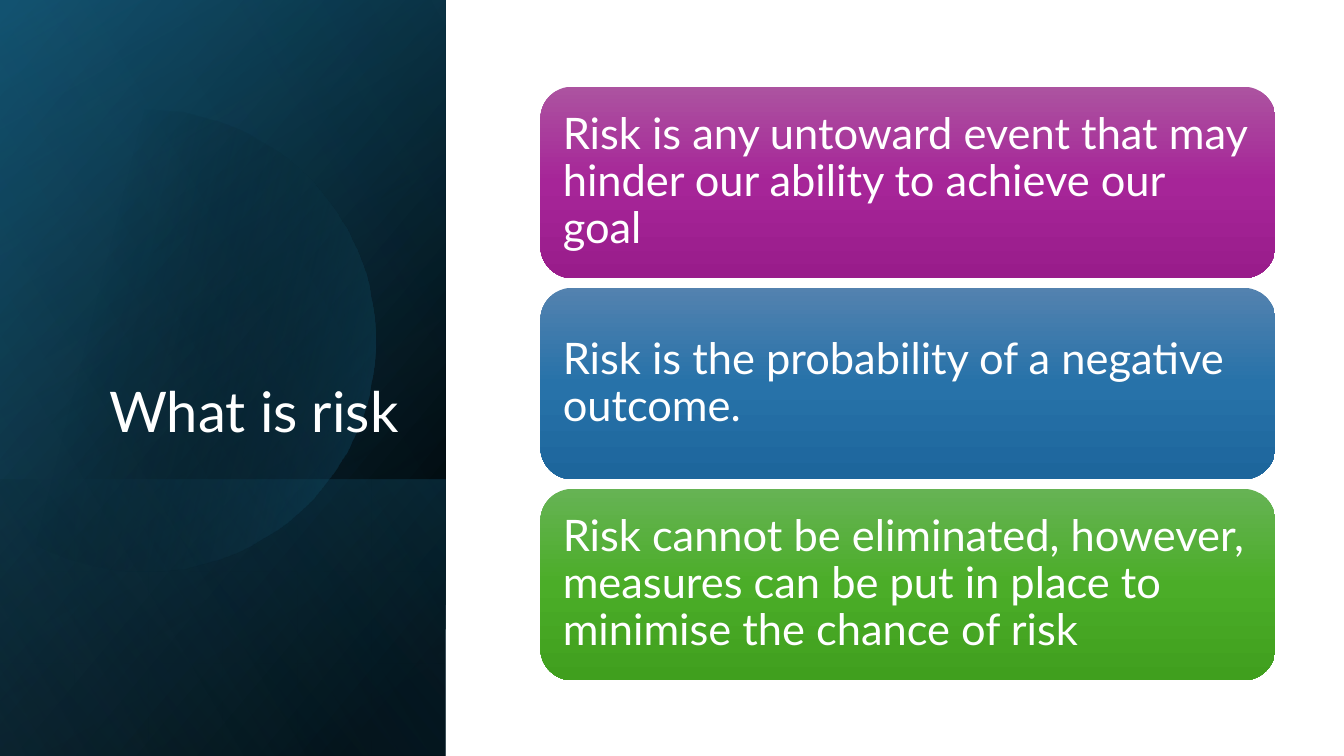
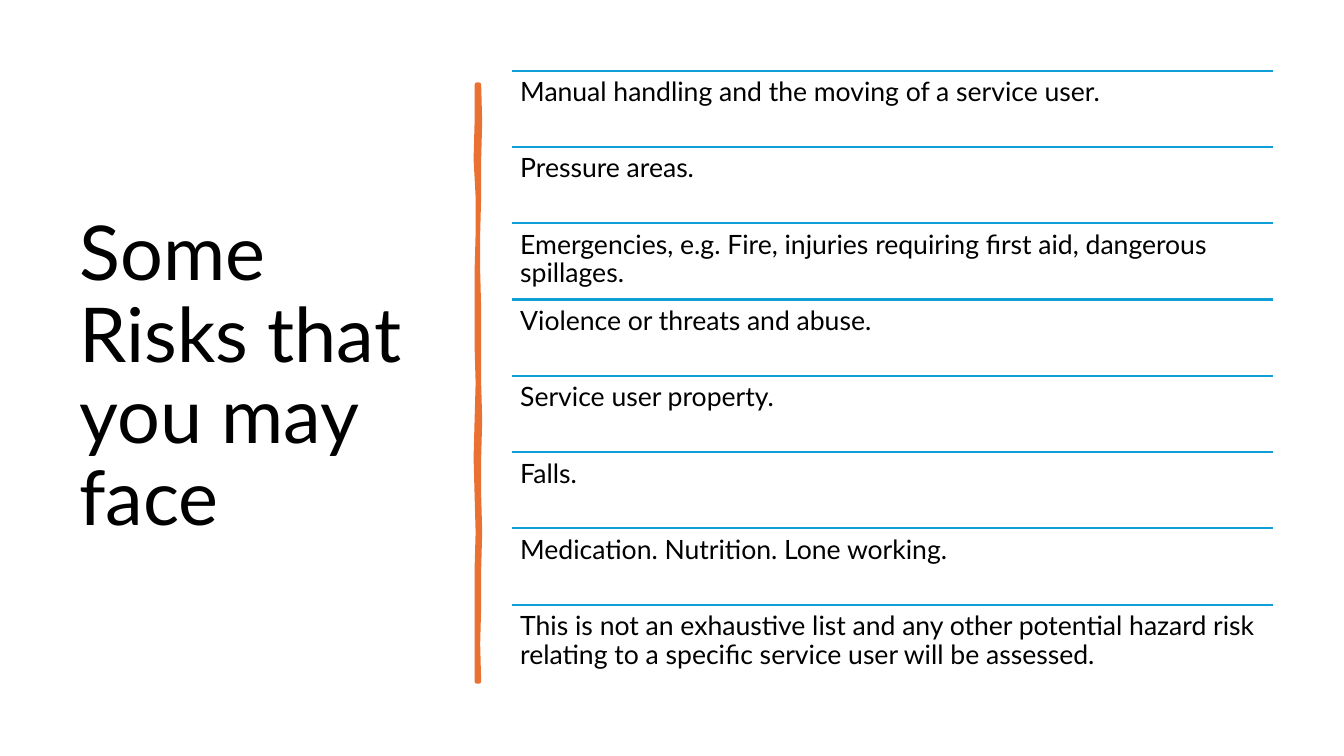
"""Build two slides about risk: a definition and a list of examples."""
import math
from dataclasses import dataclass

from lxml import etree
from pptx import Presentation
from pptx.dml.color import RGBColor
from pptx.enum.shapes import MSO_CONNECTOR, MSO_SHAPE
from pptx.enum.text import MSO_ANCHOR, PP_ALIGN
from pptx.oxml.ns import qn
from pptx.util import Emu, Pt

RECT, ROUNDED = MSO_SHAPE.RECTANGLE, MSO_SHAPE.ROUNDED_RECTANGLE
STRAIGHT = MSO_CONNECTOR.STRAIGHT
TOP, MIDDLE, BOTTOM = MSO_ANCHOR.TOP, MSO_ANCHOR.MIDDLE, MSO_ANCHOR.BOTTOM
LEFT, RIGHT = PP_ALIGN.LEFT, PP_ALIGN.RIGHT

SCALE = 9144
FONT = "Lato"
BLACK, WHITE = "000000", "FFFFFF"
TEAL, NAVY, SKY = "156082", "104862", "46B1E1"
ORANGE, BLUE = "E97132", "0F9ED5"
SLIDE_W, SLIDE_H = 1333, 750
PANEL_W = 442


@dataclass(frozen=True)
class Stop:
    pos: int
    color: str
    opacity: int = 100


@dataclass(frozen=True)
class Layer:
    top: int
    height: int
    angle: int
    stops: tuple[Stop, ...]


@dataclass(frozen=True)
class Card:
    text: str
    colors: tuple[str, str, str]


@dataclass(frozen=True)
class TextStyle:
    size: int
    color: str
    anchor: MSO_ANCHOR
    align: PP_ALIGN = LEFT
    inset_x: int = 10
    inset_y: int = 5


BACK_LAYERS = (
    Layer(0, SLIDE_H, 50, (Stop(8, BLACK), Stop(100, NAVY))),
    Layer(0, SLIDE_H, 30, (Stop(0, BLACK, 0), Stop(99, TEAL, 46))),
    Layer(476, 274, 130, (Stop(2, TEAL, 29), Stop(100, BLACK, 30))),
)
CIRCLE_STOPS = (Stop(29, BLACK, 0), Stop(100, TEAL, 43))
FRONT_LAYER = Layer(0, SLIDE_H, 120, (Stop(0, BLACK, 0), Stop(99, SKY, 11)))

CARDS = (
    Card("Risk is any untoward event that may hinder our ability to achieve our goal",
         ("AC53A0", "A62598", "991C8B")),
    Card("Risk is the probability of a negative outcome.",
         ("5382AF", "2772A9", "1D669C")),
    Card("Risk cannot be eliminated, however, measures can be put in place to "
         "minimise the chance of risk",
         ("66B354", "4BAD28", "409F1E")),
)
RISKS = (
    "Manual handling and the moving of a service user.",
    "Pressure areas.",
    "Emergencies, e.g. Fire, injuries requiring first aid, dangerous spillages.",
    "Violence or threats and abuse.",
    "Service user property.",
    "Falls.",
    "Medication. Nutrition. Lone working.",
    "This is not an exhaustive list and any other potential hazard risk relating "
    "to a specific service user will be assessed.",
)
PANEL_TITLE = TextStyle(40, WHITE, BOTTOM, RIGHT)
SIDE_TITLE = TextStyle(54, BLACK, MIDDLE)
CARD_TEXT = TextStyle(31, WHITE, MIDDLE, LEFT, 13, 13)
RISK_TEXT = TextStyle(19, BLACK, TOP, LEFT, 8, 8)

STROKE_TOP, STROKE_STEP = 84, 37
STROKE_LEFT = (473, 473, 472, 474, 474, 473, 473, 473, 474,
               473, 472, 473, 474, 473, 473, 473, 473)
STROKE_RIGHT = (475, 476, 475, 475, 474, 474, 475, 475, 475,
                476, 475, 475, 476, 475, 475, 474, 475)


def px(n: float) -> Emu:
    return Emu(round(n * SCALE))


def rgb(color: str) -> RGBColor:
    return RGBColor.from_string(color)


def set_gradient(sp, stops: tuple[Stop, ...], angle: int) -> None:
    sp.shadow.inherit = False
    sp.line.fill.background()
    sp.fill.gradient()
    grad = sp.element.spPr.find(qn("a:gradFill"))
    grad.clear()
    grad.set("rotWithShape", "1")
    gs_list = etree.SubElement(grad, qn("a:gsLst"))
    for stop in stops:
        gs = etree.SubElement(gs_list, qn("a:gs"), pos=str(stop.pos * 1000))
        clr = etree.SubElement(gs, qn("a:srgbClr"), val=stop.color)
        if stop.opacity < 100:
            etree.SubElement(clr, qn("a:alpha"), val=str(stop.opacity * 1000))
    etree.SubElement(grad, qn("a:lin"), ang=str(angle * 60000), scaled="0")


def set_text(sp, text: str, style: TextStyle) -> None:
    tf = sp.text_frame
    tf.word_wrap = True
    tf.vertical_anchor = style.anchor
    tf.margin_left = tf.margin_right = px(style.inset_x)
    tf.margin_top = tf.margin_bottom = px(style.inset_y)
    tf.text = text
    p = tf.paragraphs[0]
    p.alignment = style.align
    p.line_spacing = 0.9
    r = p.runs[0]
    r.font.name = FONT
    r.font.size = Pt(style.size)
    r.font.color.rgb = rgb(style.color)


def add_text(slide, x: int, y: int, w: int, h: int, text: str, style: TextStyle) -> None:
    sp = slide.shapes.add_textbox(px(x), px(y), px(w), px(h))
    set_text(sp, text, style)


def add_outline(slide, points: list[tuple[float, float]]):
    builder = slide.shapes.build_freeform(*points[0], scale=SCALE)
    builder.add_line_segments(points[1:], close=True)
    return builder.convert_to_shape()


def add_layer(slide, layer: Layer) -> None:
    shift = (layer.height - PANEL_W) / 2
    sp = slide.shapes.add_shape(RECT, px(-shift), px(layer.top + shift),
                                px(layer.height), px(PANEL_W))
    sp.rotation = 90
    sp.element.spPr.find(qn("a:xfrm")).set("flipH", "1")
    set_gradient(sp, layer.stops, layer.angle)


def add_circle(slide, cx: int, cy: int, radius: int) -> None:
    limit = math.acos(-cx / radius)
    steps = 90
    angles = [limit * (2 * i / steps - 1) for i in range(steps + 1)]
    sp = add_outline(slide, [(cx + radius * math.cos(a), cy + radius * math.sin(a))
                             for a in angles])
    set_gradient(sp, CIRCLE_STOPS, 14)


def add_card(slide, index: int, card: Card) -> None:
    sp = slide.shapes.add_shape(ROUNDED, px(536), px(86 + 199.5 * index), px(729), px(190))
    set_gradient(sp, tuple(Stop(50 * i, c) for i, c in enumerate(card.colors)), 90)
    set_text(sp, card.text, CARD_TEXT)


def add_stroke(slide) -> None:
    ys = [STROKE_TOP + STROKE_STEP * i for i in range(len(STROKE_LEFT))]
    left = list(zip(STROKE_LEFT, ys))
    right = list(zip(STROKE_RIGHT, ys))
    sp = add_outline(slide, right + left[::-1])
    sp.shadow.inherit = False
    sp.fill.solid()
    sp.fill.fore_color.rgb = rgb(ORANGE)
    sp.line.color.rgb = rgb(ORANGE)
    sp.line.width = Pt(3.25)
    etree.SubElement(sp.element.spPr.find(qn("a:ln")), qn("a:round"))


def add_risk(slide, index: int, text: str) -> None:
    x, w, h = 508, 755, 75.7
    y = 70 + h * index
    line = slide.shapes.add_connector(STRAIGHT, px(x), px(y), px(x + w), px(y))
    line.line.color.rgb = rgb(BLUE)
    line.line.width = Pt(1.5)
    etree.SubElement(line.element.spPr, qn("a:effectLst"))
    add_text(slide, x, y, w, h, text, RISK_TEXT)


def build_definition(slide) -> None:
    for layer in BACK_LAYERS:
        add_layer(slide, layer)
    add_circle(slide, 143, 338, 229)
    add_layer(slide, FRONT_LAYER)
    add_text(slide, 64, 184, 341, 262, "What is risk", PANEL_TITLE)
    for i, card in enumerate(CARDS):
        add_card(slide, i, card)


def build_examples(slide) -> None:
    add_text(slide, 69, 70, 374, 611, "Some Risks that you may face", SIDE_TITLE)
    add_stroke(slide)
    for i, text in enumerate(RISKS):
        add_risk(slide, i, text)


def main() -> None:
    prs = Presentation()
    prs.slide_width, prs.slide_height = px(SLIDE_W), px(SLIDE_H)
    for build in (build_definition, build_examples):
        build(prs.slides.add_slide(prs.slide_layouts[6]))
    prs.save("out.pptx")


if __name__ == "__main__":
    main()
